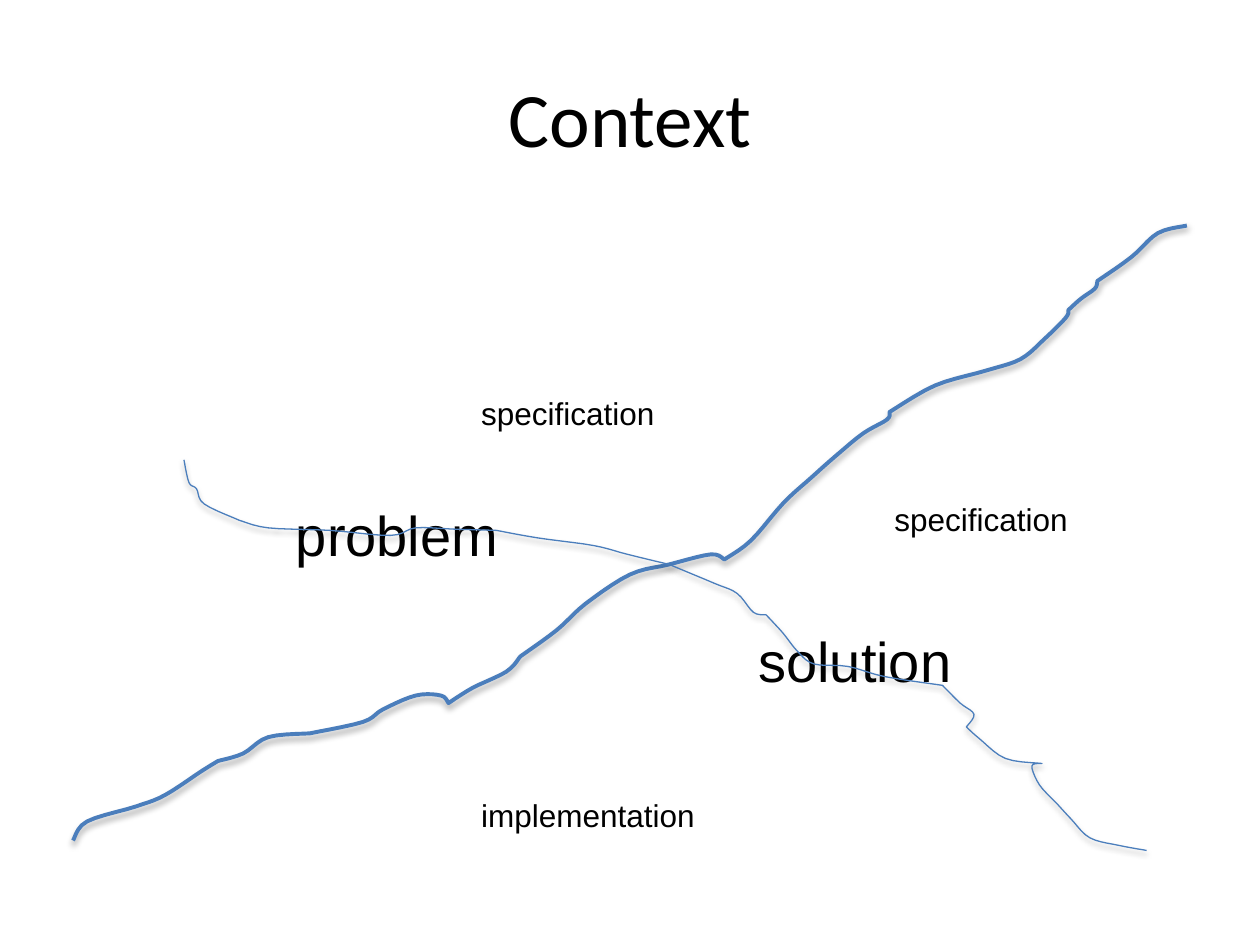
"""Build the Context slide: a river line crossed by two streams, with labels."""
from lxml.etree import SubElement
from pptx import Presentation
from pptx.dml.color import RGBColor
from pptx.enum.text import MSO_ANCHOR as Anchor, MSO_AUTO_SIZE as AutoSize, PP_ALIGN as Align
from pptx.oxml.ns import qn
from pptx.util import Inches, Pt

BLACK = RGBColor(0x00, 0x00, 0x00)
BLUE = RGBColor(0x4B, 0x7E, 0xBC)

CROSSING = (5.31, 4.48)
RIVER_LEGS = [
    [(9.42, 1.79), (9.19, 1.85), (8.98, 2.04), (8.71, 2.23)],
    [(8.71, 2.23), (8.69, 2.29), (8.58, 2.37), (8.48, 2.46)],
    [(8.48, 2.46), (8.46, 2.52), (8.29, 2.69), (8.1, 2.85), (7.83, 2.94),
     (7.42, 3.06), (7.06, 3.27)],
    [(7.06, 3.27), (7.04, 3.33), (6.85, 3.44), (6.62, 3.63), (6.44, 3.79),
     (6.22, 3.99), (5.96, 4.29), (5.75, 4.44)],
    [(5.75, 4.44), (5.64, 4.4), CROSSING, (5, 4.56), (4.65, 4.79),
     (4.42, 5), (4.13, 5.21)],
    [(4.13, 5.21), (4.02, 5.33), (3.75, 5.46), (3.56, 5.58)],
    [(3.56, 5.58), (3.5, 5.52), (3.3, 5.52), (3.04, 5.63), (2.88, 5.73), (2.46, 5.82)],
    [(2.46, 5.82), (2.13, 5.85), (1.93, 5.98), (1.73, 6.04)],
    [(1.73, 6.04), (1.6, 6.12), (1.31, 6.31), (1.08, 6.4), (0.69, 6.52), (0.58, 6.67)],
]
RIGHT_LEGS = [
    [CROSSING, (5.67, 4.63), (5.85, 4.71), (5.98, 4.86), (6.08, 4.88)],
    [(6.08, 4.88), (6.21, 5.02), (6.33, 5.17), (6.46, 5.27), (6.73, 5.29),
     (7.02, 5.37), (7.48, 5.44)],
    [(7.48, 5.44), (7.62, 5.58), (7.73, 5.67), (7.67, 5.77)],
    [(7.67, 5.77), (7.77, 5.86), (7.98, 6.02), (8.27, 6.06)],
    [(8.27, 6.06), (8.19, 6.08), (8.25, 6.23), (8.39, 6.38)],
    [(8.39, 6.38), (8.5, 6.5), (8.65, 6.65), (8.88, 6.71), (9.1, 6.75)],
]
LEFT_LEGS = [
    [CROSSING, (4.98, 4.4), (4.71, 4.33), (4.27, 4.27), (3.94, 4.21)],
    [(3.94, 4.21), (3.6, 4.2), (3.3, 4.19), (3.1, 4.25), (2.62, 4.21),
     (2.13, 4.19), (1.9, 4.13)],
    [(1.9, 4.13), (1.62, 4), (1.56, 3.88), (1.5, 3.83), (1.46, 3.65)],
]
RIVER_WIDTH, STREAM_WIDTH = 2.25, 0.75
STEPS_PER_BEND = 5
SHADOW = {"blurRad": "40000", "dist": "23000", "dir": "5400000", "rotWithShape": "0"}

LABEL_FRAME = {"word_wrap": False, "auto_size": AutoSize.SHAPE_TO_FIT_TEXT}
STYLES = {
    "title": {
        "font": {"name": "Calibri", "size": Pt(44)},
        "frame": {"word_wrap": True, "vertical_anchor": Anchor.MIDDLE},
        "line": {"alignment": Align.CENTER},
    },
    "domain": {
        "font": {"name": "Arial", "size": Pt(32)},
        "frame": LABEL_FRAME,
        "line": {"alignment": Align.LEFT},
    },
    "artifact": {
        "font": {"name": "Arial", "size": Pt(18)},
        "frame": LABEL_FRAME,
        "line": {"alignment": Align.LEFT},
    },
}
BEHIND_STREAMS = [
    ("problem", "domain", (2.25, 3.92, 1.82, 0.64)),
    ("solution", "domain", (5.92, 4.92, 1.75, 0.64)),
]
ARTIFACTS = [
    ("specification", "artifact", (7, 3.92, 1.59, 0.4)),
    ("implementation", "artifact", (3.72, 6.27, 1.91, 0.4)),
    ("specification", "artifact", (3.72, 3.08, 1.59, 0.4)),
]


def apply(target, values):
    """Set each named attribute on the target."""
    for name, value in values.items():
        setattr(target, name, value)


def spline(before, start, end, after, t):
    """Return the Catmull-Rom value at t between start and end."""
    slope = end - before
    bend = 2 * before - 5 * start + 4 * end - after
    twist = 3 * (start - end) + after - before
    return start + (slope * t + bend * t ** 2 + twist * t ** 3) / 2


def smooth(leg):
    """Yield points of a smooth curve through the bends of one leg."""
    padded = [leg[0], *leg, leg[-1]]
    for bends in zip(padded, padded[1:], padded[2:], padded[3:]):
        for step in range(1, STEPS_PER_BEND + 1):
            yield [Inches(spline(*axis, step / STEPS_PER_BEND)) for axis in zip(*bends)]


def add_stroke(slide, legs, width):
    """Draw smooth legs as one open line with a soft shadow."""
    builder = slide.shapes.build_freeform(*map(Inches, legs[0][0]))
    for leg in legs:
        builder.add_line_segments(smooth(leg), close=False)
    stroke = builder.convert_to_shape()
    stroke.fill.background()
    stroke.line.color.rgb = BLUE
    stroke.line.width = Pt(width)
    stroke.shadow.inherit = False
    effects = stroke._element.spPr.find(qn("a:effectLst"))
    shadow = SubElement(effects, qn("a:outerShdw"), SHADOW)
    tint = SubElement(shadow, qn("a:srgbClr"), val=str(BLACK))
    SubElement(tint, qn("a:alpha"), val="35000")


def add_text(slide, wording, style, box):
    """Add one line of text in a named style."""
    frame = slide.shapes.add_textbox(*map(Inches, box)).text_frame
    line = frame.paragraphs[0]
    run = line.add_run()
    run.text = wording
    run.font.color.rgb = BLACK
    for part, target in {"frame": frame, "line": line, "font": run.font}.items():
        apply(target, STYLES[style][part])


def main():
    """Assemble and save the slide."""
    deck = Presentation()
    apply(deck, {"slide_width": Inches(10), "slide_height": Inches(7.5)})
    slide = deck.slides.add_slide(deck.slide_layouts[6])
    add_text(slide, "Context", "title", (0.5, 0.3, 9, 1.25))
    add_stroke(slide, RIVER_LEGS, RIVER_WIDTH)
    for label in BEHIND_STREAMS:
        add_text(slide, *label)
    for legs in (RIGHT_LEGS, LEFT_LEGS):
        add_stroke(slide, legs, STREAM_WIDTH)
    for label in ARTIFACTS:
        add_text(slide, *label)
    deck.save("out.pptx")


if __name__ == "__main__":
    main()
